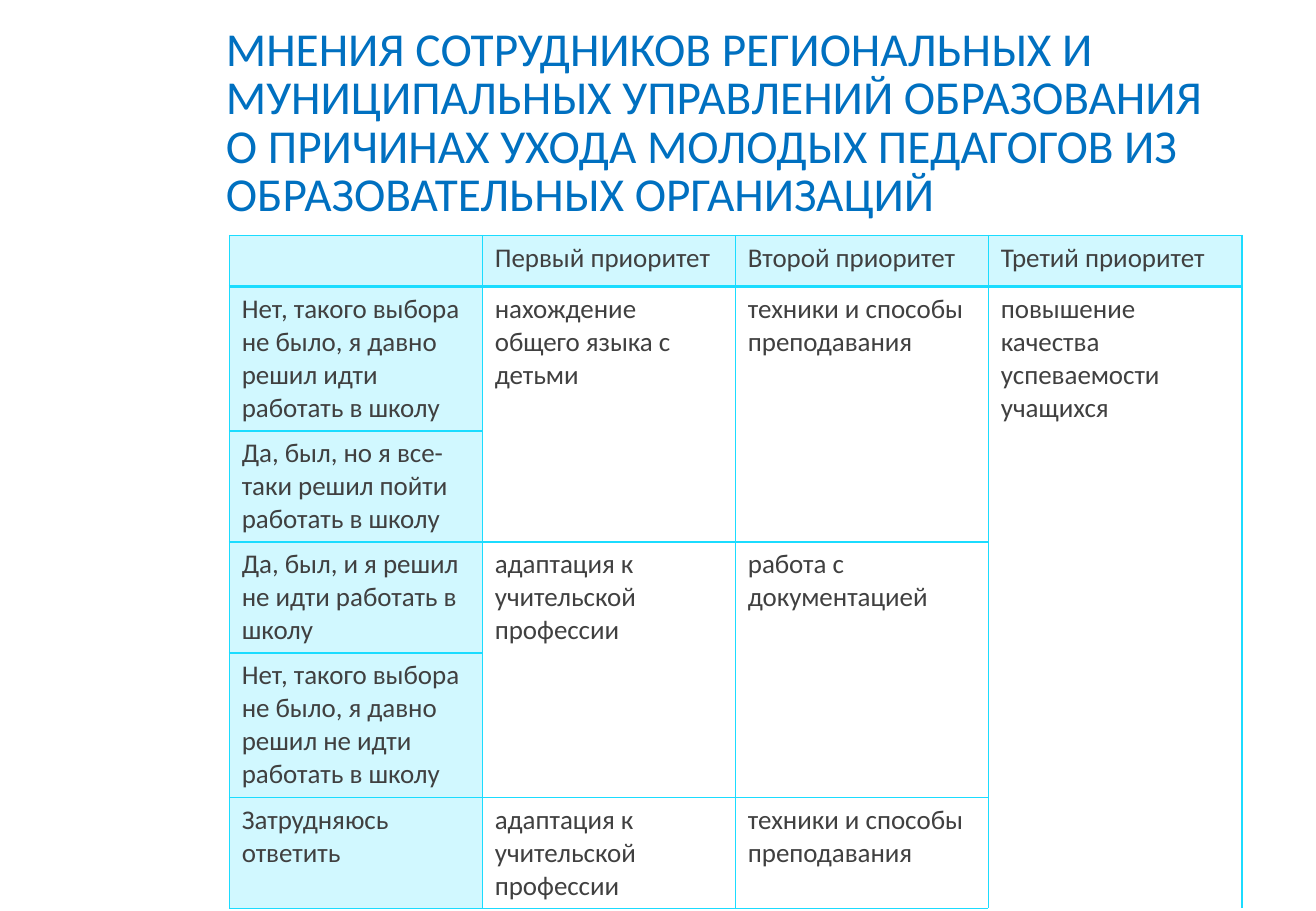
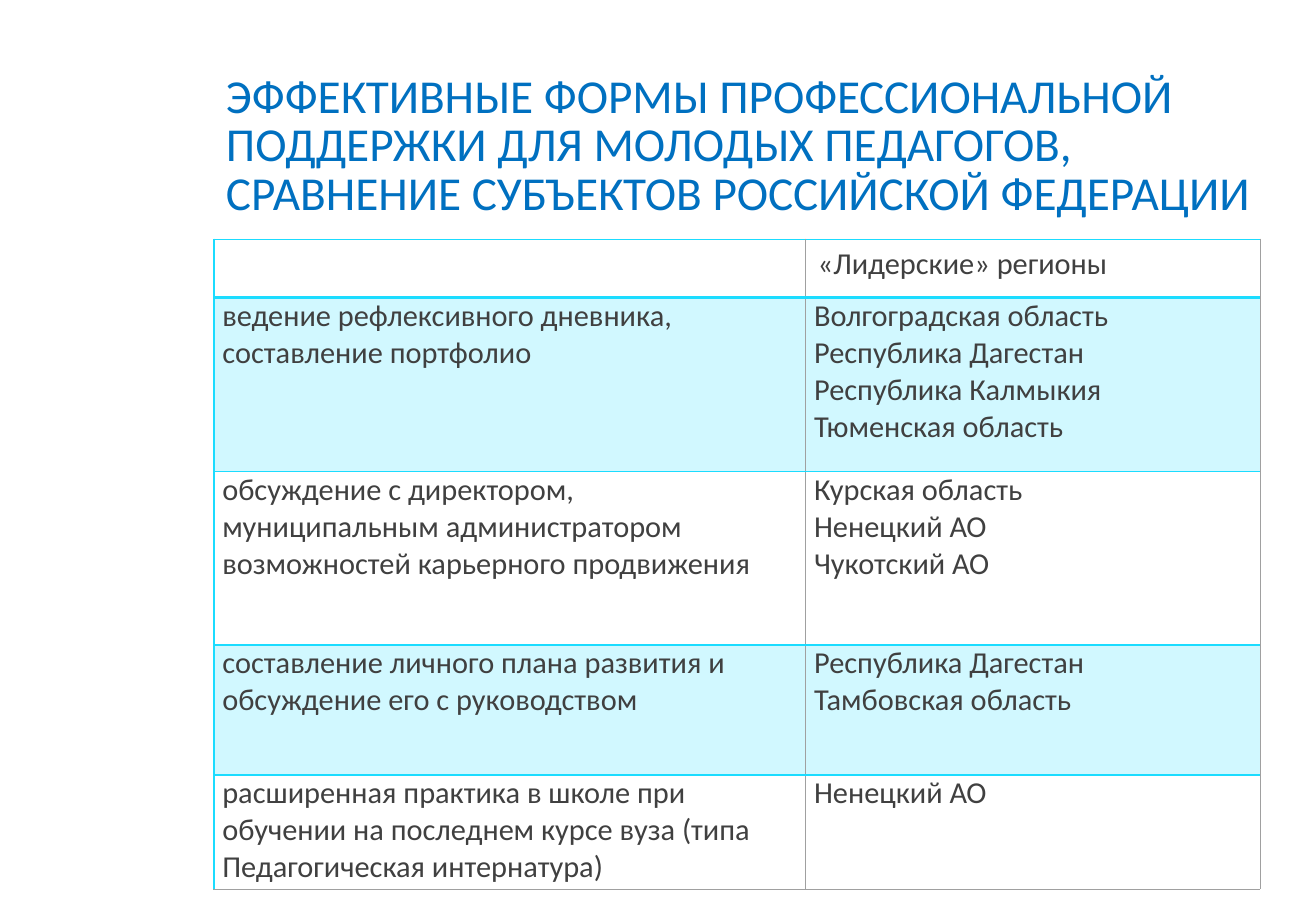
import pptx
import pptx.dml.color
import pptx.enum.text
import pptx.oxml
import pptx.oxml.ns
import pptx.util
from pptx.util import Inches

FONT = "Calibri"
TITLE_BLUE = "0070C0"
TEXT_GREY = "404040"
CYAN = "1BDCFF"
PALE_CYAN = "D1F8FF"
THIN_GREY = "A0A0A0"
WHITE = "FFFFFF"
SIDES = {"left": "lnL", "right": "lnR", "top": "lnT", "bottom": "lnB"}


def rgb(value):
    return pptx.dml.color.RGBColor.from_string(value)


def add_edge(cell, side, colour, points):
    tag = SIDES[side]
    cell._tc.get_or_add_tcPr().append(pptx.oxml.parse_xml(
        f'<a:{tag} {pptx.oxml.ns.nsdecls("a")} w="{int(points * 12700)}">'
        f'<a:solidFill><a:srgbClr val="{colour}"/></a:solidFill></a:{tag}>'))


# Content: merges are (top row, left column, bottom row, right column)
reasons = {
    "title": "МНЕНИЯ СОТРУДНИКОВ РЕГИОНАЛЬНЫХ И МУНИЦИПАЛЬНЫХ УПРАВЛЕНИЙ ОБРАЗОВАНИЯ "
             "О ПРИЧИНАХ УХОДА МОЛОДЫХ ПЕДАГОГОВ ИЗ ОБРАЗОВАТЕЛЬНЫХ ОРГАНИЗАЦИЙ",
    "title_box": (1.76, 0.42, 8.33, 1.45),
    "table_box": (1.89, 1.94, 8.33, 5.45),
    "columns": [8.33 / 4] * 4,
    "heights": [0.42, 1.11, 0.86, 0.86, 1.11, 0.86],
    "size": 16,
    "margins": (0.1, 0.05),
    "merges": [(1, 1, 2, 1), (1, 2, 2, 2), (1, 3, 5, 3), (3, 1, 4, 1), (3, 2, 4, 2)],
    "tinted": lambda row, column: row == 0 or column == 0,
    "grey_edges": {(row, column, side) for row, side in [(2, "bottom"), (3, "top")]
                   for column in (1, 2)},
    "rows": [
        ["", "Первый приоритет", "Второй приоритет", "Третий приоритет"],
        ["Нет, такого выбора не было, я давно решил идти работать в школу",
         "нахождение общего языка с детьми", "техники и способы преподавания",
         "повышение качества успеваемости учащихся"],
        ["Да, был, но я все-таки решил пойти работать в школу", "", "", ""],
        ["Да, был, и я решил не идти работать в школу",
         "адаптация к учительской профессии", "работа с документацией", ""],
        ["Нет, такого выбора не было, я давно решил не идти работать в школу", "", "", ""],
        ["Затрудняюсь ответить", "адаптация к учительской профессии",
         "техники и способы преподавания", ""],
    ],
}
support = {
    "title": "ЭФФЕКТИВНЫЕ ФОРМЫ ПРОФЕССИОНАЛЬНОЙ ПОДДЕРЖКИ ДЛЯ МОЛОДЫХ ПЕДАГОГОВ, "
             "СРАВНЕНИЕ СУБЪЕКТОВ РОССИЙСКОЙ ФЕДЕРАЦИИ",
    "title_box": (1.76, 0.34, 8.68, 1.52),
    "table_box": (1.76, 1.97, 8.61, 5.34),
    "columns": [4.87, 3.74],
    "heights": [0.48, 1.43, 1.43, 1.07, 0.94],
    "size": 18,
    "margins": (0.07, 0),
    "merges": [],
    "tinted": lambda row, column: row % 2 == 1,
    "grey_edges": {(row, column, side) for row in range(5)
                   for column, side in [(0, "right"), (1, "left"), (1, "right")]}
                  | {(4, 0, "bottom"), (4, 1, "bottom")},
    "rows": [
        ["", "«Лидерские» регионы"],
        ["ведение рефлексивного дневника, составление портфолио",
         "Волгоградская область\nРеспублика Дагестан\nРеспублика Калмыкия\nТюменская область"],
        ["обсуждение с директором, муниципальным администратором возможностей "
         "карьерного продвижения",
         "Курская область\nНенецкий АО\nЧукотский АО"],
        ["составление личного плана развития и обсуждение его с руководством",
         "Республика Дагестан\nТамбовская область"],
        ["расширенная практика в школе при обучении на последнем курсе вуза "
         "(типа Педагогическая интернатура)", "Ненецкий АО"],
    ],
}

deck = pptx.Presentation()
deck.slide_width = Inches(10.83)
deck.slide_height = Inches(7.5)

for topic in (reasons, support):
    slide = deck.slides.add_slide(deck.slide_layouts[5])

    # Title
    title = slide.shapes.title
    title.left, title.top, title.width, title.height = map(Inches, topic["title_box"])
    title.text_frame.word_wrap = True
    title.text_frame.auto_size = pptx.enum.text.MSO_AUTO_SIZE.NONE
    title.text_frame.vertical_anchor = pptx.enum.text.MSO_ANCHOR.BOTTOM
    heading = title.text_frame.paragraphs[0]
    heading.alignment = pptx.enum.text.PP_ALIGN.LEFT
    heading.line_spacing = 0.85
    heading_run = heading.add_run()
    heading_run.text = topic["title"]
    heading_run.font.name = FONT
    heading_run.font.size = pptx.util.Pt(28)
    heading_run.font.color.rgb = rgb(TITLE_BLUE)

    # Table grid
    rows = topic["rows"]
    table = slide.shapes.add_table(len(rows), len(rows[0]),
                                   *map(Inches, topic["table_box"])).table
    table.first_row = False
    table.horz_banding = False
    for column, width in zip(table.columns, topic["columns"]):
        column.width = Inches(width)
    for row, height in zip(table.rows, topic["heights"]):
        row.height = Inches(height)
    for top, left, bottom, right in topic["merges"]:
        table.cell(top, left).merge(table.cell(bottom, right))

    for r, texts in enumerate(rows):
        for c, text in enumerate(texts):
            cell = table.cell(r, c)

            # Borders, left out inside merged cells
            inside_below = r + 1 < len(rows) and table.cell(r + 1, c).is_spanned
            for side in SIDES:
                if side == "top" and cell.is_spanned or side == "bottom" and inside_below:
                    continue
                header_line = (r, side) in [(0, "bottom"), (1, "top")]
                if (r, c, side) in topic["grey_edges"]:
                    add_edge(cell, side, THIN_GREY, 0.5)
                else:
                    add_edge(cell, side, CYAN, 2 if header_line else 1)

            # Fill and margins
            cell.fill.solid()
            cell.fill.fore_color.rgb = rgb(PALE_CYAN if topic["tinted"](r, c) else WHITE)
            across, down = topic["margins"] if r else (0.1, 0.05)
            cell.margin_left = cell.margin_right = Inches(across)
            cell.margin_top = cell.margin_bottom = Inches(down)

            # Text
            for i, line in enumerate(text.split("\n") if text else []):
                frame = cell.text_frame
                paragraph = frame.add_paragraph() if i else frame.paragraphs[0]
                run = paragraph.add_run()
                run.text = line
                run.font.name = FONT
                run.font.size = pptx.util.Pt(topic["size"])
                run.font.bold = False
                run.font.color.rgb = rgb(TEXT_GREY)

deck.save("out.pptx")
